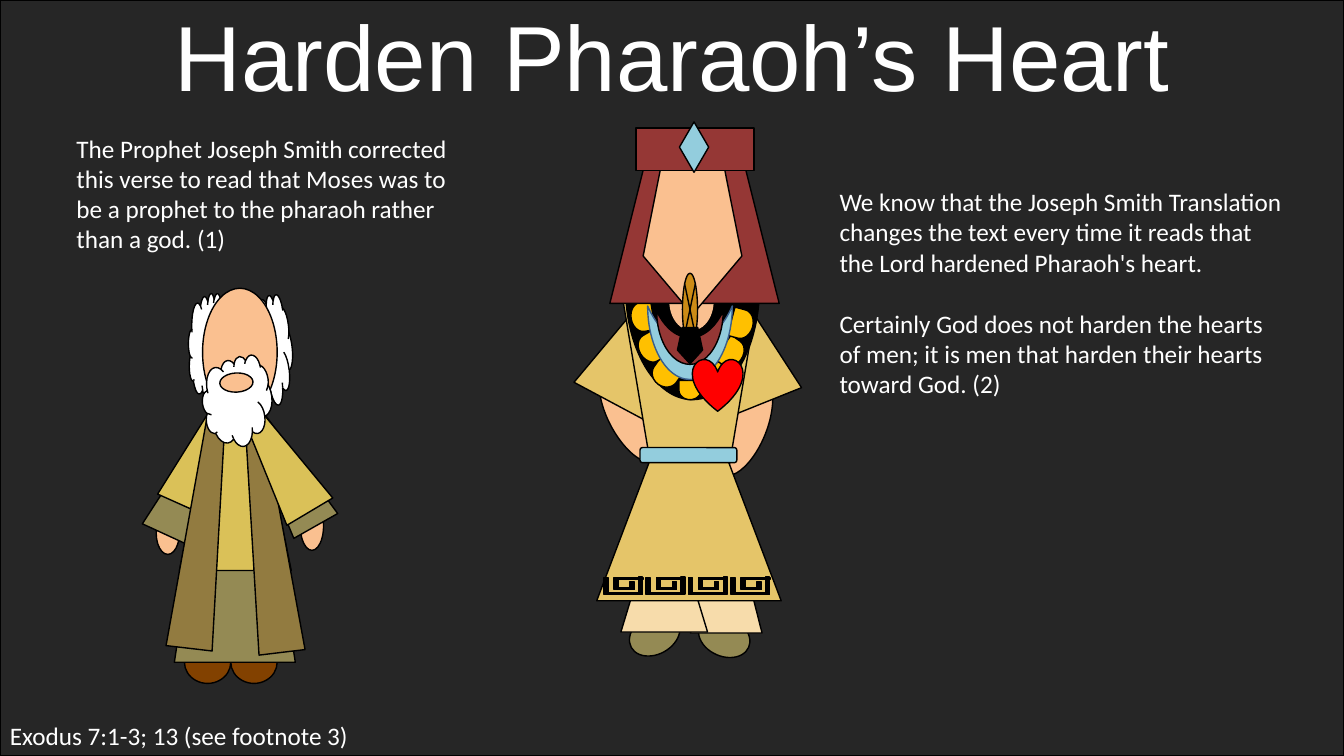
from dataclasses import dataclass
from pptx import Presentation
from pptx.dml.color import RGBColor as Rgb
from pptx.enum.shapes import MSO_SHAPE as Kind
from pptx.enum.text import MSO_AUTO_SIZE as Fit, PP_ALIGN as Align
from pptx.util import Inches, Pt


@dataclass(frozen=True)
class Theme:
    """Colours, type and grid of the slide."""
    night: str = "262626"
    ink: str = "000000"
    white: str = "FFFFFF"
    skin: str = "FAC090"
    olive: str = "948A54"
    cream: str = "F7DCAB"
    sand: str = "E5C569"
    straw: str = "DAC158"
    brown: str = "927B40"
    shoe: str = "824100"
    gold: str = "FFC000"
    amber: str = "CC8B16"
    wine: str = "953735"
    sky: str = "93CDDD"
    steel: str = "3A5F8C"
    red: str = "FF0000"
    head: str = "Arial"
    body: str = "Calibri"
    large: int = 66
    small: int = 18
    gap: int = 22
    edge: int = 1
    cols: float = 133.33
    rows: float = 75


T = Theme()


def cell(n):
    """Turn grid cells, ten to the inch, into a length."""
    return Inches(n / 10)


def draw(shapes, kind, box, fill, turn=0, adj=None, line=T.ink, flip=False):
    """Add one filled shape at a grid box."""
    item = shapes.add_shape(kind, *map(cell, box))
    item.shadow.inherit = False
    item.fill.solid()
    item.fill.fore_color.rgb = Rgb.from_string(fill)
    if line:
        item.line.color.rgb = Rgb.from_string(line)
        item.line.width = Pt(T.edge)
    else:
        item.line.fill.background()
    if adj:
        item.adjustments[0] = adj
    if flip:
        item._element.spPr.xfrm.set("flipH", "1")
    item.rotation = turn


def write(shapes, box, texts, size=T.small, font=T.body, align=Align.LEFT):
    """Add a text box with one paragraph for each text."""
    frame = shapes.add_textbox(*map(cell, box)).text_frame
    frame.word_wrap = True
    frame.auto_size = Fit.SHAPE_TO_FIT_TEXT
    for i, text in enumerate(texts):
        para = frame.add_paragraph() if i else frame.paragraphs[0]
        para.text = text
        para.alignment = align
        para.space_before = Pt(T.gap if i else 0)
        para.font.size = Pt(size)
        para.font.name = font
        para.font.color.rgb = Rgb.from_string(T.white)


def build(shapes, parts):
    """Draw a list of parts from back to front."""
    for part in parts:
        draw(shapes, *part)


def beads(shapes):
    """Draw the gold beads of the collar."""
    for *box, turn in (
        (67.5, 37.6, 1.9, 2.2, 90),
        (69.6, 36.2, 2.4, 2.7, 60.2),
        (71.5, 33.6, 2.2, 2.9, 35.1),
        (72.5, 30.7, 2.2, 2.9, 15.1),
        (64.8, 35.8, 2.4, 2.7, 305.1),
        (63.4, 33.1, 2.2, 2.9, 330.2),
        (62.6, 30, 2.2, 2.9, 350.3),
    ):
        draw(shapes, Kind.FLOWCHART_DELAY, box, T.gold, turn, flip=turn > 180)


def border(shapes, left=59.9, step=4.2, count=4):
    """Draw the key pattern along the hem."""
    bars = (
        (0, 58.8, 3.8, 0.2, 0),
        (-0.6, 57.9, 1.6, 0.4, 90),
        (2.8, 57.9, 1.7, 0.4, 90),
        (1.1, 57.3, 2.8, 0.2, 0),
        (0.6, 57.7, 1.2, 0.4, 90),
        (1.2, 58.3, 1.8, 0.2, 0),
        (2.4, 57.9, 0.8, 0.4, 90),
    )
    for i in range(count):
        for x, y, w, h, turn in bars:
            draw(shapes, Kind.RECTANGLE, (left + i * step + x, y, w, h), T.ink, turn)


def pharaoh(shapes):
    """Draw the pharaoh."""
    oval, trap, moon = Kind.OVAL, Kind.TRAPEZOID, Kind.MOON
    five = Kind.REGULAR_PENTAGON
    build(shapes, (
        (oval, (68.3, 39.7, 10.7, 4.9), T.skin, 291.6),
        (oval, (57.4, 38.6, 10.7, 4.9), T.skin, 242.4),
        (oval, (69.2, 61.2, 5.3, 3.9), T.olive, 23.9),
        (oval, (62.3, 61, 5.3, 3.9), T.olive, 331),
        (trap, (68.5, 54.3, 7.1, 8.5), T.cream, 0, 0.303),
        (trap, (61.6, 54.2, 8.6, 8.5), T.cream, 0, 0.303),
        (trap, (70.5, 27, 6.8, 13.2), T.sand, 338.1, 0.378),
        (trap, (59.9, 26.1, 8.1, 14.6), T.sand, 28.1, 0.378),
        (trap, (61.6, 28.6, 13.7, 19), T.sand, 180, 0.233),
        (moon, (63.1, 27.4, 11.2, 13.3), T.ink, 270, 0.875),
        (oval, (66.4, 27, 4.4, 5.8), T.skin, 0, None, None),
    ))
    beads(shapes)
    build(shapes, (
        (moon, (64.8, 29.8, 7.3, 8.4), T.sky, 270, None, T.steel),
        (moon, (65.8, 30.2, 5.3, 6.6), T.wine, 270),
        (trap, (60.5, 16.3, 16.8, 13.8), T.wine),
        (five, (63.8, 16, 9.8, 15.2), T.skin, 180),
        (Kind.RECTANGLE, (63.1, 12.7, 11.7, 4.2), T.wine),
        (Kind.FLOWCHART_SUMMING_JUNCTION, (67.7, 27.1, 1.5, 7.2), T.amber),
        (five, (67.2, 32.5, 2.5, 3.6), T.ink, 180),
        (Kind.FLOWCHART_DECISION, (67.4, 12.1, 2.9, 5), T.sky),
        (trap, (59.2, 45.8, 18.3, 13.8), T.sand, 0, 0.379),
        (Kind.ROUNDED_RECTANGLE, (63.5, 44.4, 9.6, 1.5), T.sky),
    ))
    border(shapes)


def moses(shapes):
    """Draw Moses."""
    oval, trap, cloud, adj = Kind.OVAL, Kind.TRAPEZOID, Kind.CLOUD, 0.305
    build(shapes, (
        (oval, (18.3, 63.6, 4.6, 4.2), T.shoe),
        (oval, (22.9, 63.6, 4.6, 4.2), T.shoe),
        (oval, (15.5, 50.8, 2.3, 4.2), T.skin),
        (trap, (16.5, 41.1, 6, 12.7), T.olive, 24.7, adj),
        (trap, (17.5, 40.3, 4.6, 10.1), T.straw, 24.1, adj),
        (trap, (17.3, 41.8, 12, 23.9), T.olive, 0, adj),
        (trap, (17.8, 40.2, 11.1, 16.4), T.straw, 0, adj),
        (trap, (17.8, 41.4, 4.6, 23), T.brown, 6.7, adj),
        (cloud, (18.7, 29.1, 3.7, 10.6), T.white),
        (cloud, (24.8, 29.3, 4.2, 10.9), T.white, 352.9),
        (oval, (20.1, 28.6, 7.4, 12.7), T.skin),
        (trap, (24.3, 41.8, 4.6, 23), T.brown, 353.1, adj),
        (oval, (29.8, 49.8, 2.3, 4.8), T.skin),
        (trap, (25.7, 40.3, 5, 12.7), T.olive, 330.5, adj),
        (trap, (25.4, 41, 5.3, 10.5), T.straw, 329.2, adj),
        (cloud, (20.1, 35.4, 6.9, 8.9), T.white, 352.9),
        (oval, (22.5, 36.3, 1.9, 3.3), T.skin, 87.1),
    ))


def main():
    """Build and save the slide."""
    deck = Presentation()
    deck.slide_width, deck.slide_height = cell(T.cols), cell(T.rows)
    shapes = deck.slides.add_slide(deck.slide_layouts[6]).shapes
    draw(shapes, Kind.RECTANGLE, (0, 0, T.cols, T.rows), T.night)
    write(shapes, (0, -0.6, T.cols, 12.1), ["Harden Pharaoh’s Heart"],
          T.large, T.head, Align.CENTER)
    write(shapes, (0, 71, 132.6, 4), ["Exodus 7:1-3; 13 (see footnote 3)"])
    pharaoh(shapes.add_group_shape().shapes)
    draw(shapes, Kind.HEART, (68.7, 35.6, 5, 5.2), T.red)
    write(shapes, (6.6, 12.7, 40.6, 13.1), [
        "The Prophet Joseph Smith corrected this verse to read that Moses was "
        "to be a prophet to the pharaoh rather than a god. (1)"])
    write(shapes, (82.3, 18, 46.1, 22.2), [
        "We know that the Joseph Smith Translation changes the text every time "
        "it reads that the Lord hardened Pharaoh's heart.",
        "Certainly God does not harden the hearts of men; it is men that "
        "harden their hearts toward God. (2)"])
    moses(shapes.add_group_shape().shapes)
    deck.save("out.pptx")


if __name__ == "__main__":
    main()
